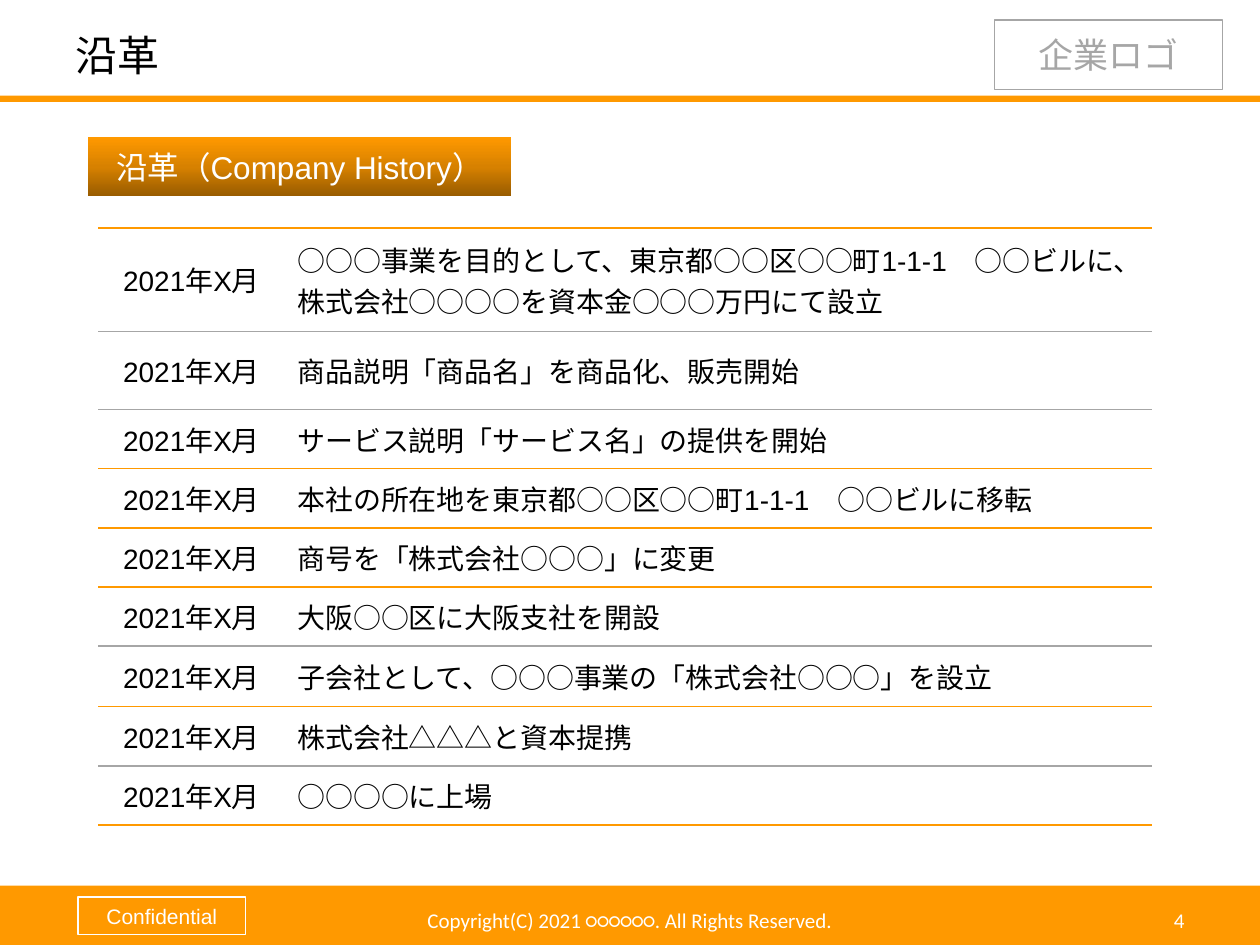
import copy

import pptx
import pptx.dml.color
import pptx.enum.shapes
import pptx.enum.text
import pptx.oxml
import pptx.oxml.ns
import pptx.util

Inches = pptx.util.Inches
Pt = pptx.util.Pt
Align = pptx.enum.text.PP_ALIGN
Anchor = pptx.enum.text.MSO_ANCHOR

COLORS = {
    "orange": "FF9900",
    "amber": "D78100",
    "brown": "975B00",
    "grey": "A6A6A6",
    "white": "FFFFFF",
    "black": "000000",
}

DATE = "2021年X月"
HISTORY = [
    (0.82, "grey", "○○○事業を目的として、東京都○○区○○町1-1-1　○○ビルに、\n株式会社○○○○を資本金○○○万円にて設立"),
    (0.62, "grey", "商品説明「商品名」を商品化、販売開始"),
    (0.47, "orange", "サービス説明「サービス名」の提供を開始"),
    (0.47, "orange", "本社の所在地を東京都○○区○○町1-1-1　○○ビルに移転"),
    (0.47, "orange", "商号を「株式会社○○○」に変更"),
    (0.47, "grey", "大阪○○区に大阪支社を開設"),
    (0.48, "orange", "子会社として、○○○事業の「株式会社○○○」を設立"),
    (0.47, "grey", "株式会社△△△と資本提携"),
    (0.47, "orange", "○○○○に上場"),
]


def rgb(name):
    return pptx.dml.color.RGBColor.from_string(COLORS[name])


class SlideBuilder:
    def __init__(self, page):
        self.page = page

    def style_text(self, frame, text, size, font, color, align):
        frame.text = text
        for para in frame.paragraphs:
            para.alignment = align
            for span in para.runs:
                span.font.size = Pt(size)
                span.font.name = font
                span.font.color.rgb = rgb(color)

    def label(self, area, text, size, color="white", align=Align.CENTER):
        box = self.page.shapes.add_textbox(*map(Inches, area))
        box.text_frame.word_wrap = True
        box.text_frame.vertical_anchor = Anchor.MIDDLE
        self.style_text(box.text_frame, text, size, "Calibri", color, align)

    def rectangle(self, area, fill=None, line=None):
        kind = pptx.enum.shapes.MSO_SHAPE.RECTANGLE
        box = self.page.shapes.add_shape(kind, *map(Inches, area))
        box.shadow.inherit = False
        if fill:
            box.fill.solid()
            box.fill.fore_color.rgb = rgb(fill)
        else:
            box.fill.background()
        if line:
            box.line.color.rgb = rgb(line)
            box.line.width = Pt(0.75)
        else:
            box.line.fill.background()
        return box

    def tag(self, area, text, size, font, color, line=None):
        box = self.rectangle(area, line=line)
        box.text_frame.vertical_anchor = Anchor.MIDDLE
        self.style_text(box.text_frame, text, size, font, color, Align.CENTER)
        return box

    def gradient(self, box, names):
        box.fill.gradient()
        box.fill.gradient_angle = 90
        stop_list = box._element.find(".//" + pptx.oxml.ns.qn("a:gsLst"))
        while len(stop_list) < len(names):
            stop_list.append(copy.deepcopy(stop_list[0]))
        for index, (stop, name) in enumerate(zip(box.fill.gradient_stops, names)):
            stop.position = index / (len(names) - 1)
            stop.color.rgb = rgb(name)

    def border(self, cell, top, bottom):
        properties = cell._tc.get_or_add_tcPr()
        edges = (("lnL", None), ("lnR", None), ("lnT", top), ("lnB", bottom))
        for index, (edge, name) in enumerate(edges):
            paint = "<a:noFill/>"
            if name:
                paint = f'<a:solidFill><a:srgbClr val="{COLORS[name]}"/></a:solidFill>'
            namespace = pptx.oxml.ns.nsdecls("a")
            xml = f'<a:{edge} {namespace} w="{Pt(1)}">{paint}</a:{edge}>'
            properties.insert(index, pptx.oxml.parse_xml(xml))

    def history_table(self, area, widths, rows):
        frame = self.page.shapes.add_table(len(rows), len(widths), *map(Inches, area))
        table = frame.table
        table.first_row = False
        table.horz_banding = False
        for column, width in zip(table.columns, widths):
            column.width = Inches(width)
        top = "orange"
        for row, (height, bottom, event) in zip(table.rows, rows):
            row.height = Inches(height)
            contents = ((DATE, Align.CENTER), (event, Align.LEFT))
            for cell, (text, align) in zip(row.cells, contents):
                cell.fill.background()
                cell.vertical_anchor = Anchor.MIDDLE
                self.style_text(cell.text_frame, text, 16, "Arial", "black", align)
                self.border(cell, top, bottom)
            top = bottom


def main():
    deck = pptx.Presentation()
    deck.slide_width = Inches(10)
    deck.slide_height = Inches(7.5)
    builder = SlideBuilder(deck.slides.add_slide(deck.slide_layouts[6]))

    builder.rectangle((0, 7.03, 10, 0.47), fill="orange")
    builder.rectangle((0, 0.76, 10, 0.05), fill="orange")
    builder.tag((7.89, 0.16, 1.81, 0.55), "企業ロゴ", 20, "Calibri", "grey", line="grey")
    builder.tag((0.62, 7.12, 1.33, 0.3), "Confidential", 12, "Arial", "white", line="white")

    builder.label((0.5, 0.16, 7.24, 0.55), "沿革", 24, "black", Align.LEFT)
    builder.label((7.17, 7.1, 2.33, 0.4), "4", 12, align=Align.RIGHT)
    builder.label((2.91, 7.1, 4.18, 0.4), "Copyright(C) 2021 ○○○○○○. All Rights Reserved.", 12)

    builder.history_table((0.78, 1.81, 8.36, 4.75), (1.48, 6.88), HISTORY)
    heading = builder.tag((0.7, 1.09, 3.36, 0.47), "沿革（Company History）", 18, "Arial", "white")
    builder.gradient(heading, ("brown", "amber", "orange"))

    deck.save("out.pptx")


if __name__ == "__main__":
    main()
